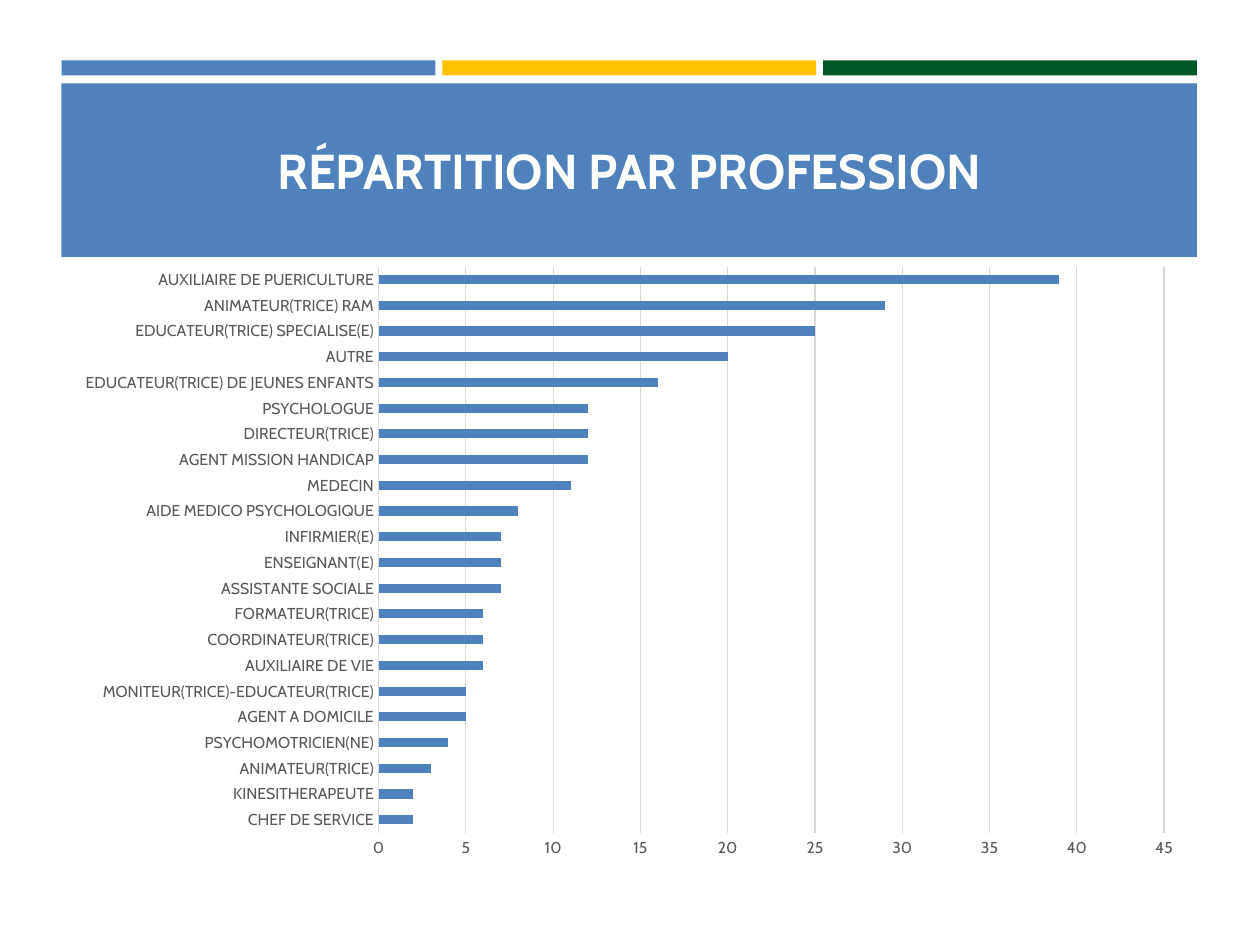
"""Build the slide showing the breakdown of participants by profession."""
from pptx import Presentation
from pptx.chart.data import CategoryChartData
from pptx.dml.color import RGBColor
from pptx.enum.chart import XL_CHART_TYPE, XL_TICK_MARK
from pptx.enum.shapes import MSO_SHAPE
from pptx.enum.text import MSO_ANCHOR, PP_ALIGN
from pptx.util import Cm, Pt

COLORS = {
    "blue": "4F81BD",
    "yellow": "FFC000",
    "green": "005827",
    "white": "FFFFFF",
    "black": "000000",
    "label": "595959",
    "grid": "D9D9D9",
}
FONT = "Cabin"
PROFESSIONS = [
    ("CHEF DE SERVICE", 2),
    ("KINESITHERAPEUTE", 2),
    ("ANIMATEUR(TRICE)", 3),
    ("PSYCHOMOTRICIEN(NE)", 4),
    ("AGENT A DOMICILE", 5),
    ("MONITEUR(TRICE)-EDUCATEUR(TRICE)", 5),
    ("AUXILIAIRE DE VIE", 6),
    ("COORDINATEUR(TRICE)", 6),
    ("FORMATEUR(TRICE)", 6),
    ("ASSISTANTE SOCIALE", 7),
    ("ENSEIGNANT(E)", 7),
    ("INFIRMIER(E)", 7),
    ("AIDE MEDICO PSYCHOLOGIQUE", 8),
    ("MEDECIN", 11),
    ("AGENT MISSION HANDICAP", 12),
    ("DIRECTEUR(TRICE)", 12),
    ("PSYCHOLOGUE", 12),
    ("EDUCATEUR(TRICE) DE JEUNES ENFANTS", 16),
    ("AUTRE", 20),
    ("EDUCATEUR(TRICE) SPECIALISE(E)", 25),
    ("ANIMATEUR(TRICE) RAM", 29),
    ("AUXILIAIRE DE PUERICULTURE", 39),
]


def rgb(name):
    return RGBColor.from_string(COLORS[name])


def set_font(font, size, color, bold=False):
    font.name = FONT
    font.size = Pt(size)
    font.bold = bold
    font.color.rgb = rgb(color)


prs = Presentation()
prs.slide_width, prs.slide_height = Cm(25.4), Cm(19.05)
s = prs.slides.add_slide(prs.slide_layouts[6])

left, width, gap = 1.24, 22.89, 0.14
stripe_width = (width - 2 * gap) / 3
bands = [
    (left + i * (stripe_width + gap), 1.22, stripe_width, 0.3, color)
    for i, color in enumerate(("blue", "yellow", "green"))
]
bands.append((left, 1.68, width, 3.5, "blue"))
for x, y, w, h, color in bands:
    sp = s.shapes.add_shape(MSO_SHAPE.RECTANGLE, Cm(x), Cm(y), Cm(w), Cm(h))
    sp.shadow.inherit = False
    sp.fill.solid()
    sp.fill.fore_color.rgb = rgb(color)
    sp.line.fill.background()

title = s.shapes.add_textbox(Cm(1.27), Cm(0.53), Cm(22.83), Cm(3.61))
tf = title.text_frame
tf.word_wrap = True
tf.vertical_anchor = MSO_ANCHOR.BOTTOM
p = tf.paragraphs[0]
p.text = "RÉPARTITION PAR PROFESSION"
p.alignment = PP_ALIGN.CENTER
set_font(p.font, 28, "white", bold=True)

data = CategoryChartData()
data.categories = [name for name, count in PROFESSIONS]
data.add_series("Series 1", [count for name, count in PROFESSIONS])
chart = s.shapes.add_chart(
    XL_CHART_TYPE.BAR_CLUSTERED, Cm(1.27), Cm(5.13), Cm(22.83), Cm(12.4), data
).chart
chart.has_legend = False
chart.has_title = False
set_font(chart.font, 10, "black")

plot = chart.plots[0]
plot.gap_width = 182
plot.vary_by_categories = False
fill = plot.series[0].format.fill
fill.solid()
fill.fore_color.rgb = rgb("blue")

for axis in (chart.category_axis, chart.value_axis):
    axis.major_tick_mark = XL_TICK_MARK.NONE
    axis.minor_tick_mark = XL_TICK_MARK.NONE
    set_font(axis.tick_labels.font, 9, "label")

chart.category_axis.has_major_gridlines = False
chart.value_axis.has_major_gridlines = True
chart.value_axis.format.line.fill.background()
for line in (
    chart.category_axis.format.line,
    chart.value_axis.major_gridlines.format.line,
):
    line.color.rgb = rgb("grid")
    line.width = Pt(0.75)

prs.save("out.pptx")
